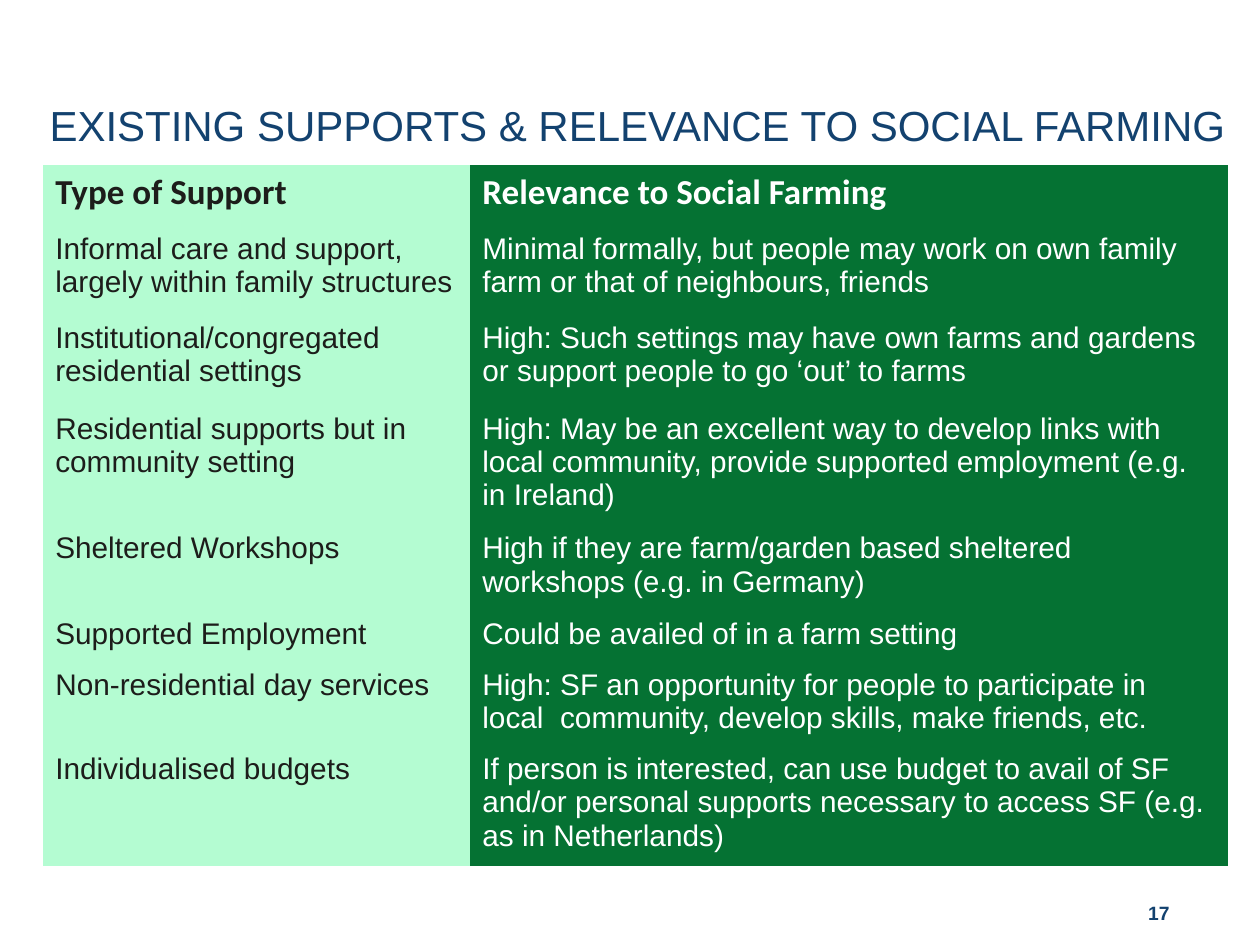
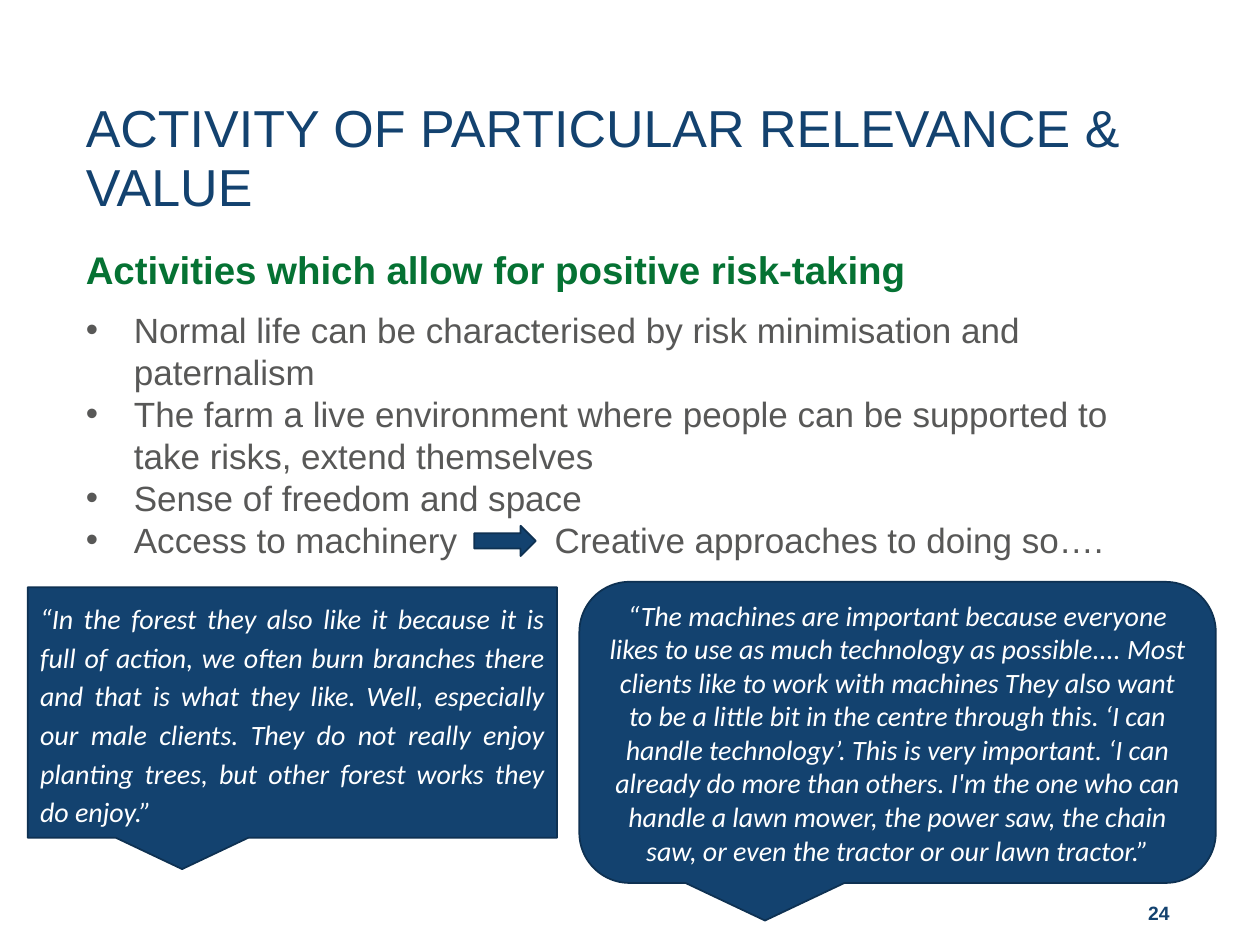
from dataclasses import dataclass

from lxml import etree
from pptx import Presentation
from pptx import util as u
from pptx.dml.color import RGBColor
from pptx.enum import shapes, text
from pptx.oxml import ns


@dataclass(frozen=True)
class Theme:
    navy: str = "13426F"
    navy_edge: str = "0E3152"
    green: str = "057233"
    mint: str = "B4FCD2"
    ink: str = "1D1D1B"
    grey: str = "585857"
    white: str = "FFFFFF"
    body_font: str = "Arial"
    accent_font: str = "Calibri"
    title_size: float = 29.7
    long_title_size: float = 24
    subtitle_size: float = 22
    bullet_size: float = 20
    header_size: float = 20
    cell_size: float = 17
    quote_size: float = 16
    number_size: float = 11


THEME = Theme()
ALIGN = text.PP_ALIGN
ANCHOR = text.MSO_ANCHOR

COLUMN_WIDTHS = (8.61, 15.29)
ROW_HEIGHTS = (1.22, 1.8, 1.83, 2.03, 1.73, 1.02, 1.68, 2.03)
SUPPORTS = (
    ("Type of Support", "Relevance to Social Farming"),
    ("Informal care and support, largely within family structures",
     "Minimal formally, but people may work on own family farm or that of "
     "neighbours, friends"),
    ("Institutional/congregated residential settings",
     "High: Such settings may have own farms and gardens or support people "
     "to go ‘out’ to farms"),
    ("Residential supports but in community setting",
     "High: May be an excellent way to develop links with local community, "
     "provide supported employment (e.g. in Ireland)"),
    ("Sheltered Workshops",
     "High if they are farm/garden based sheltered workshops (e.g. in Germany)"),
    ("Supported Employment", "Could be availed of in a farm setting"),
    ("Non-residential day services",
     "High: SF an opportunity for people to participate in local  community, "
     "develop skills, make friends, etc."),
    ("Individualised budgets",
     "If person is interested, can use budget to avail of SF and/or personal "
     "supports necessary to access SF (e.g. as in Netherlands)"),
)

RISK_POINTS = (
    "Normal life can be characterised by risk minimisation and paternalism",
    "The farm a live environment where people can be supported to take risks, "
    "extend themselves",
    "Sense of freedom and space",
    "Access to machinery\tCreative approaches to doing so….",
)
FOREST_QUOTE = (
    "“In the forest they also like it because it is full of action, we often "
    "burn branches there and that is what they like. Well, especially our male "
    "clients. They do not really enjoy planting trees, but other forest works "
    "they do enjoy.”"
)
MACHINE_QUOTE = (
    "“The machines are important because everyone likes to use as much "
    "technology as possible.... Most clients like to work with machines They "
    "also want to be a little bit in the centre through this. ‘I can handle "
    "technology’. This is very important. ‘I can already do more than others. "
    "I'm the one who can handle a lawn mower, the power saw, the chain saw, or "
    "even the tractor or our lawn tractor.”"
)


def colour(value):
    return RGBColor.from_string(value)


def lengths(values):
    return [u.Cm(value) for value in values]


def add_bullet(paragraph, indent, tab=None):
    """Give a hanging bullet and, if wanted, one tab stop (both in cm)."""
    properties = paragraph._p.get_or_add_pPr()
    properties.set("marL", str(u.Cm(indent)))
    properties.set("indent", str(-u.Cm(indent)))
    bullet_font = etree.SubElement(properties, ns.qn("a:buFont"))
    bullet_font.set("typeface", THEME.body_font)
    etree.SubElement(properties, ns.qn("a:buChar")).set("char", "•")
    if tab:
        stops = etree.SubElement(properties, ns.qn("a:tabLst"))
        stop = etree.SubElement(stops, ns.qn("a:tab"))
        stop.set("pos", str(u.Cm(tab)))
        stop.set("algn", "l")


def write(frame, lines, *, size, color, font=THEME.body_font, bold=False,
          italic=False, align=ALIGN.LEFT, spacing=None, anchor=ANCHOR.TOP,
          insets=None, bullet_indent=None, tab=None):
    """Fill a text frame with one paragraph per line."""
    frame.word_wrap = True
    frame.vertical_anchor = anchor
    if insets:
        (frame.margin_left, frame.margin_top,
         frame.margin_right, frame.margin_bottom) = lengths(insets)
    for index, line in enumerate([lines] if isinstance(lines, str) else lines):
        paragraph = frame.add_paragraph() if index else frame.paragraphs[0]
        paragraph.alignment = align
        if spacing:
            paragraph.line_spacing = spacing
        if bullet_indent:
            add_bullet(paragraph, bullet_indent, tab if "\t" in line else None)
        run = paragraph.add_run()
        run.text = line
        run.font.name = font
        run.font.size = u.Pt(size)
        run.font.bold = bold
        run.font.italic = italic
        run.font.color.rgb = colour(color)


def add_text(slide, box, lines, *, insets=(0, 0.13, 0.25, 0.13), **style):
    shape = slide.shapes.add_textbox(*lengths(box))
    write(shape.text_frame, lines, insets=insets, **style)


def add_title(slide, box, title, size, spacing, anchor=ANCHOR.TOP):
    add_text(slide, box, title, size=size, color=THEME.navy,
             spacing=u.Pt(spacing), anchor=anchor)


def add_page_number(slide, number):
    add_text(slide, (19.66, 17.5, 5.72, 1.52), str(number),
             size=THEME.number_size, color=THEME.navy, bold=True,
             align=ALIGN.RIGHT, anchor=ANCHOR.BOTTOM, spacing=u.Pt(13.3),
             insets=(0, 0.13, 1.8, 0.41))


def add_navy_shape(slide, kind, box):
    shape = slide.shapes.add_shape(kind, *lengths(box))
    shape.shadow.inherit = False
    shape.fill.solid()
    shape.fill.fore_color.rgb = colour(THEME.navy)
    shape.line.color.rgb = colour(THEME.navy_edge)
    shape.line.width = u.Pt(1)
    return shape


def add_quote(slide, kind, box, quote, **style):
    shape = add_navy_shape(slide, kind, box)
    write(shape.text_frame, quote, size=THEME.quote_size, color=THEME.white,
          font=THEME.accent_font, italic=True, anchor=ANCHOR.MIDDLE, **style)


def paint_cell(cell, fill):
    """Remove the borders of a cell and fill it."""
    properties = cell._tc.get_or_add_tcPr()
    for side in ("lnL", "lnR", "lnT", "lnB"):
        border = etree.SubElement(properties, ns.qn(f"a:{side}"))
        etree.SubElement(border, ns.qn("a:noFill"))
    cell.fill.solid()
    cell.fill.fore_color.rgb = colour(fill)


def add_support_table(slide, left, top):
    box = (left, top, sum(COLUMN_WIDTHS), sum(ROW_HEIGHTS))
    table = slide.shapes.add_table(
        len(SUPPORTS), len(COLUMN_WIDTHS), *lengths(box)).table
    table.first_row = table.horz_banding = False
    for column, width in zip(table.columns, COLUMN_WIDTHS):
        column.width = u.Cm(width)
    for row, height in zip(table.rows, ROW_HEIGHTS):
        row.height = u.Cm(height)

    header = dict(size=THEME.header_size, font=THEME.accent_font, bold=True)
    body = dict(size=THEME.cell_size)
    column_colours = ((THEME.mint, THEME.ink), (THEME.green, THEME.white))
    for row_index, entries in enumerate(SUPPORTS):
        style = body if row_index else header
        for column_index, entry in enumerate(entries):
            fill, ink = column_colours[column_index]
            cell = table.cell(row_index, column_index)
            paint_cell(cell, fill)
            write(cell.text_frame, entry, color=ink, **style)


def build_supports_slide(slide):
    add_title(slide, (1, 1.83, 24, 1.52),
              "EXISTING SUPPORTS & RELEVANCE TO SOCIAL FARMING",
              THEME.long_title_size, 25, ANCHOR.MIDDLE)
    add_support_table(slide, 0.86, 3.33)
    add_page_number(slide, 17)


def build_risk_slide(slide):
    left = 1.73
    add_title(slide, (left, 1.85, 21.97, 1.8),
              "ACTIVITY OF PARTICULAR RELEVANCE & VALUE",
              THEME.title_size, 34)
    add_text(slide, (left, 4.88, 19.89, 1.17),
             "Activities which allow for positive risk-taking",
             size=THEME.subtitle_size, color=THEME.green, bold=True,
             spacing=u.Pt(25))
    add_text(slide, (left, 6.17, 21.92, 11.33), RISK_POINTS,
             size=THEME.bullet_size, color=THEME.grey, spacing=u.Pt(24),
             insets=(0, 0.05, 0.25, 0.13), bullet_indent=0.97, tab=9.45)
    add_page_number(slide, 24)

    preset = shapes.MSO_SHAPE
    add_quote(slide, preset.RECTANGULAR_CALLOUT, (0.56, 11.84, 10.67, 5.05),
              FOREST_QUOTE, align=ALIGN.JUSTIFY, spacing=1.15)
    add_quote(slide, preset.ROUNDED_RECTANGULAR_CALLOUT,
              (11.68, 11.73, 12.83, 6.07), MACHINE_QUOTE, align=ALIGN.CENTER)
    add_navy_shape(slide, preset.RIGHT_ARROW, (9.56, 10.6, 1.24, 0.61))


def main():
    presentation = Presentation()
    presentation.slide_width = u.Cm(25.4)
    presentation.slide_height = u.Cm(19.05)
    blank = presentation.slide_layouts[6]
    for build in (build_supports_slide, build_risk_slide):
        build(presentation.slides.add_slide(blank))
    presentation.save("out.pptx")


if __name__ == "__main__":
    main()
